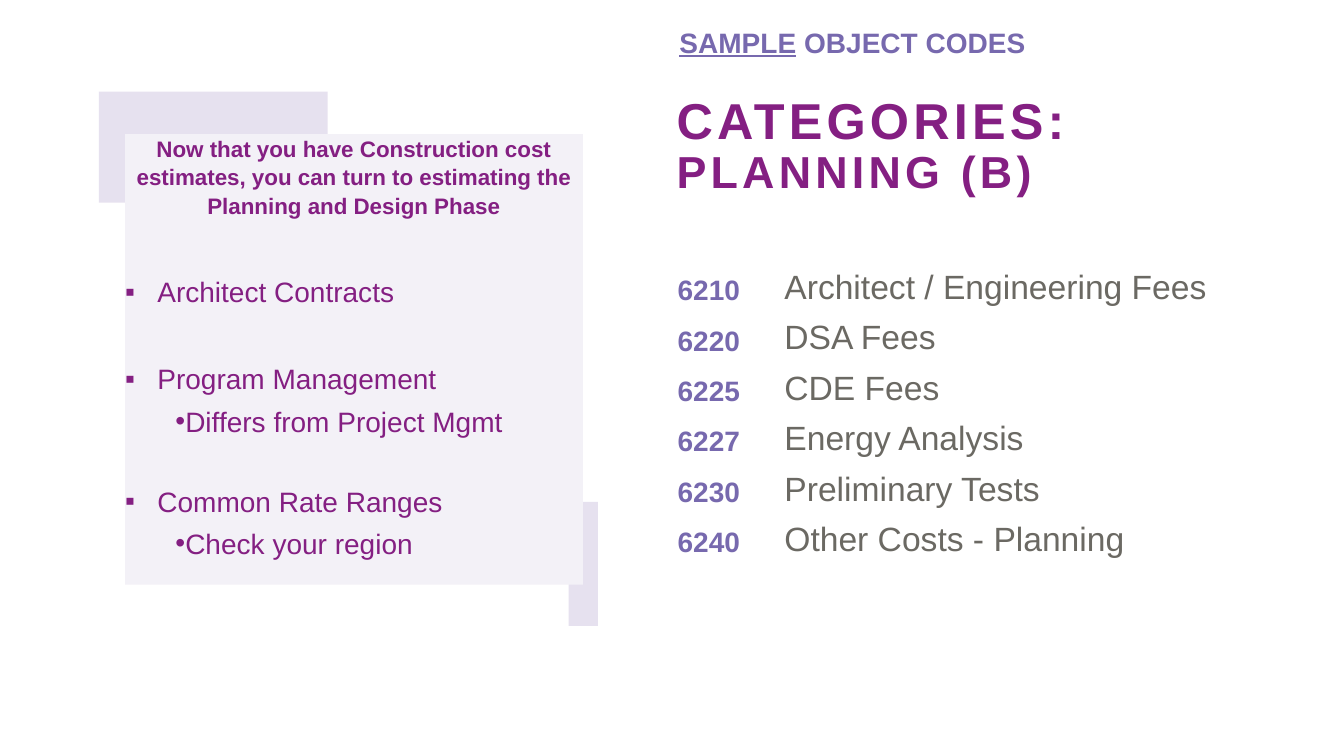
from lxml import etree
from pptx import Presentation
from pptx.dml.color import RGBColor
from pptx.enum.shapes import MSO_SHAPE
from pptx.enum.text import MSO_ANCHOR, MSO_AUTO_SIZE, PP_ALIGN
from pptx.oxml.ns import qn
from pptx.util import Inches, Pt

RECT = MSO_SHAPE.RECTANGLE
TOP, BOTTOM = MSO_ANCHOR.TOP, MSO_ANCHOR.BOTTOM
NO_FIT = MSO_AUTO_SIZE.NONE
LEFT, CENTER = PP_ALIGN.LEFT, PP_ALIGN.CENTER
PLUM, VIOLET, GRAY = "841F82", "7769AE", "6B6963"
LILAC, PALE = "C5B9D9", "F3F1F7"

ITEMS = [
    ("Architect Contracts", 0, 39),
    ("Program Management", 0, 37),
    ("Differs from Project Mgmt", 1, 5),
    ("Common Rate Ranges", 0, 32),
    ("Check your region", 1, 5),
]
MARKS = [("▪", 0.32, -0.32), ("•", 0.5, 0)]
CODES = [
    ("6210", "Architect / Engineering Fees"),
    ("6220", "DSA Fees"),
    ("6225", "CDE Fees"),
    ("6227", "Energy Analysis"),
    ("6230", "Preliminary Tests"),
    ("6240", "Other Costs - Planning"),
]


def color(code):
    """Turn a hex string into a colour."""
    return RGBColor.from_string(code)


def write(para, text, size=20, ink=PLUM, bold=False, line=False, track=0):
    """Add a formatted run to a paragraph."""
    run = para.add_run()
    run.text = text
    font = run.font
    font.name, font.size = "Arial", Pt(size)
    font.bold, font.underline = bold, line
    font.color.rgb = color(ink)
    if track:
        font._element.set("spc", str(track * 100))


def indent(para, mark=None, margin=0, first=0):
    """Set the bullet and indents of a paragraph."""
    props = para._p.get_or_add_pPr()
    props.set("marL", str(Inches(margin)))
    props.set("indent", str(Inches(first)))
    if mark:
        etree.SubElement(props, qn("a:buChar")).set("char", mark)
    else:
        etree.SubElement(props, qn("a:buNone"))


def place(shape, left, top, width, height):
    """Move a placeholder and clear its insets."""
    shape.left, shape.top = Inches(left), Inches(top)
    shape.width, shape.height = Inches(width), Inches(height)
    frame = shape.text_frame
    frame.margin_left = frame.margin_right = 0
    frame.margin_top = frame.margin_bottom = 0
    frame.vertical_anchor = TOP
    frame.word_wrap = True
    frame.auto_size = NO_FIT
    return frame


def accent(slide, left, top, width, height):
    """Add a translucent block behind the placeholders."""
    block = slide.shapes.add_shape(
        RECT, Inches(left), Inches(top), Inches(width), Inches(height))
    block.shadow.inherit = False
    block.line.fill.background()
    block.fill.solid()
    block.fill.fore_color.rgb = color(LILAC)
    tint = block.element.spPr.find(".//" + qn("a:srgbClr"))
    etree.SubElement(tint, qn("a:alpha")).set("val", "42000")
    slide.shapes.title.element.addprevious(block.element)


def head(slide):
    """Write the label and the title."""
    box = slide.shapes.add_textbox(
        Inches(6.64), Inches(0.2), Inches(5.03), Inches(0.44))
    box.text_frame.word_wrap = True
    label = box.text_frame.paragraphs[0]
    write(label, "SAMPLE", ink=VIOLET, bold=True, line=True)
    write(label, " OBJECT CODES", ink=VIOLET, bold=True)
    title = place(slide.shapes.title, 6.71, 0.95, 5.84, 1).paragraphs[0]
    title.alignment = LEFT
    title.line_spacing = 0.9
    write(title, "CATEGORIES: ", size=36, bold=True, track=3)
    write(title, "PLANNING (B)", size=32, bold=True, track=3)


def panel(slide):
    """Fill the body panel with its lead and list."""
    body = slide.placeholders[1]
    body.fill.solid()
    body.fill.fore_color.rgb = color(PALE)
    frame = place(body, 1.24, 1.33, 4.54, 4.47)
    lead = frame.paragraphs[0]
    indent(lead)
    lead.alignment = CENTER
    lead.space_before = Pt(0)
    lead.line_spacing = 1.05
    write(lead, "Now that you have Construction cost estimates, you can turn "
          "to estimating the Planning and Design Phase", size=16, bold=True)
    for text, level, gap in ITEMS:
        para = frame.add_paragraph()
        para.level = level
        indent(para, *MARKS[level])
        para.space_before = Pt(gap)
        para.line_spacing = 1.05
        write(para, text)


def fill(cell, text, align, **style):
    """Write one clear table cell."""
    cell.fill.background()
    cell.vertical_anchor = BOTTOM
    cell.margin_left = cell.margin_right = Inches(0.16)
    para = cell.text_frame.paragraphs[0]
    para.alignment = align
    write(para, text, **style)


def codes(slide):
    """Add the table of object codes."""
    table = slide.shapes.add_table(
        len(CODES), 2, Inches(6.44), Inches(2.59),
        Inches(6.17), Inches(0.5 * len(CODES))).table
    table.first_row = table.horz_banding = False
    table.columns[0].width = Inches(1.18)
    table.columns[1].width = Inches(4.99)
    for row, (code, name) in enumerate(CODES):
        fill(table.cell(row, 0), code, CENTER, ink=VIOLET, bold=True)
        fill(table.cell(row, 1), name, LEFT, size=24, ink=GRAY)


def main():
    """Build and save the slide."""
    deck = Presentation()
    deck.slide_width, deck.slide_height = Inches(13.33), Inches(7.5)
    slide = deck.slides.add_slide(deck.slide_layouts[1])
    accent(slide, 0.98, 0.91, 2.27, 1.1)
    accent(slide, 5.64, 4.98, 0.29, 1.23)
    head(slide)
    panel(slide)
    codes(slide)
    deck.save("out.pptx")


if __name__ == "__main__":
    main()
